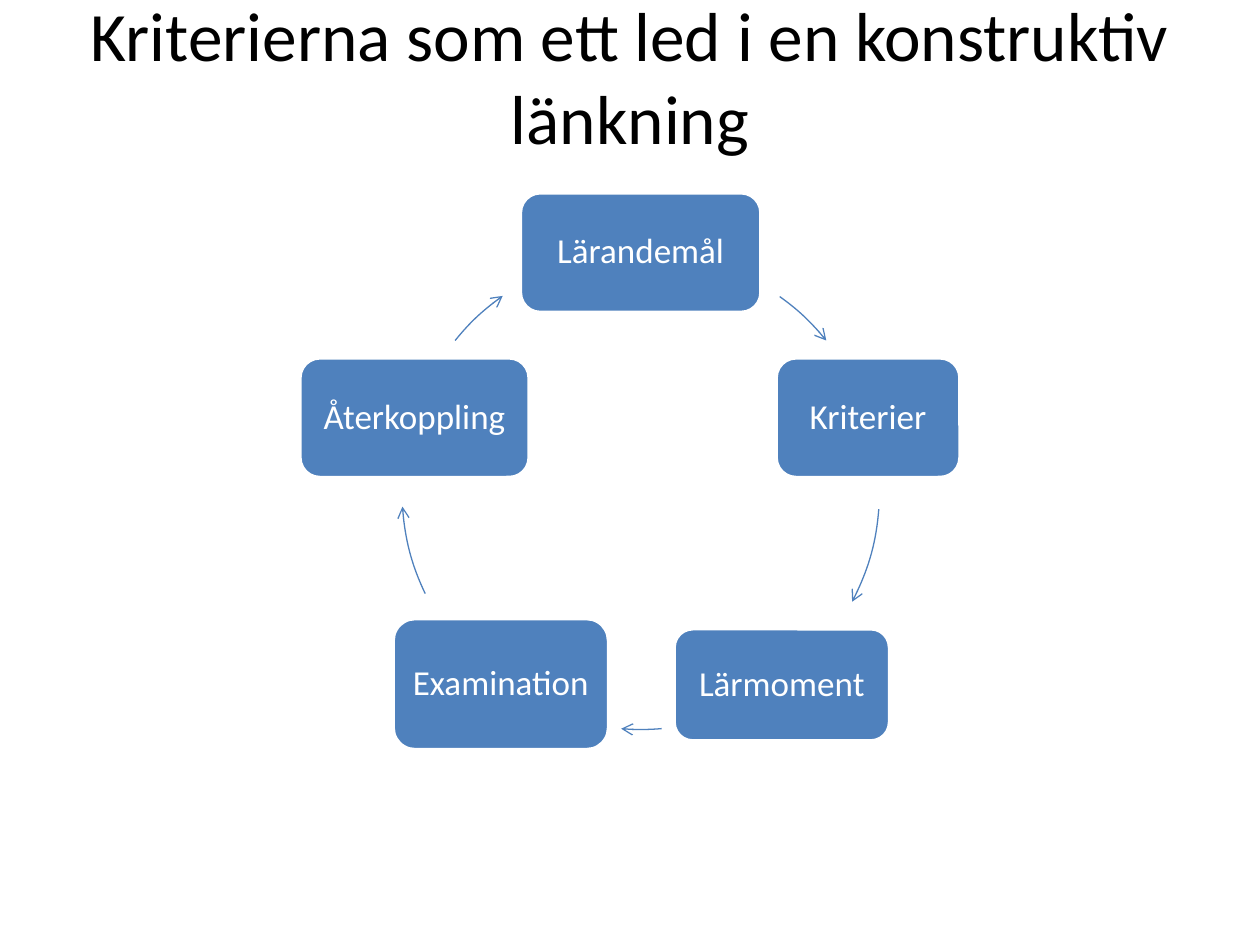
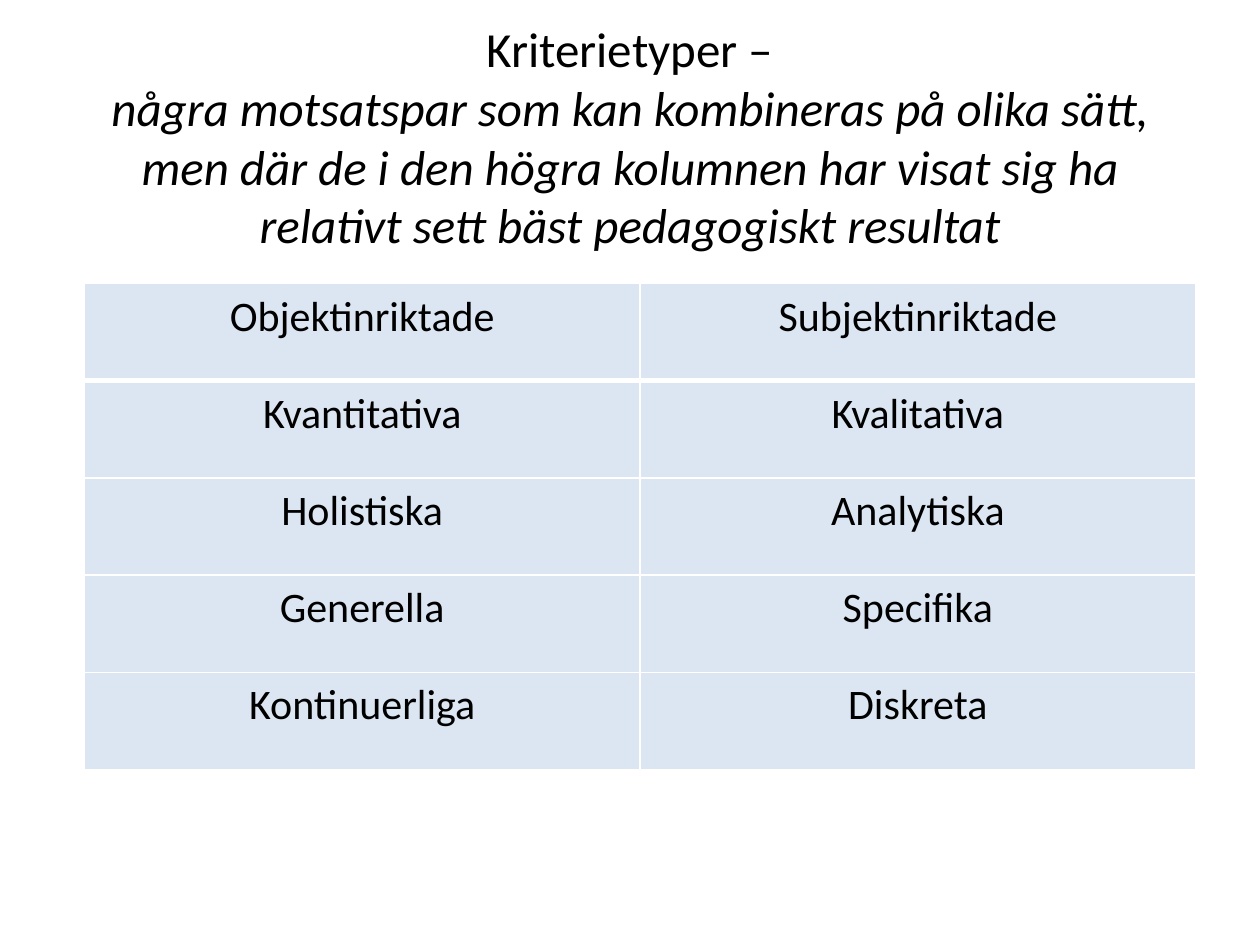
from dataclasses import dataclass
from math import cos, radians, sin
from typing import NamedTuple

from lxml.etree import SubElement
from pptx import Presentation
from pptx.dml.color import RGBColor
from pptx.enum.shapes import MSO_SHAPE as SHAPE
from pptx.enum.text import MSO_ANCHOR as ANCHOR, PP_ALIGN as ALIGN
from pptx.oxml.ns import qn
from pptx.util import Inches, Pt


@dataclass(frozen=True)
class Theme:
    font: str = "Calibri"
    black: RGBColor = RGBColor(0x00, 0x00, 0x00)
    white: RGBColor = RGBColor(0xFF, 0xFF, 0xFF)
    blue: RGBColor = RGBColor(0x4F, 0x81, 0xBD)
    pale_blue: RGBColor = RGBColor(0xDC, 0xE6, 0xF2)
    title: float = 39.6
    long_title: float = 28
    table: float = 24
    step: float = 20


THEME = Theme()


class Step(NamedTuple):
    """A box of the cycle, with the angles of the arrow that leaves it."""
    text: str
    left: float
    top: float
    width: float
    height: float
    arrow_start: float
    arrow_end: float


class TitleLine(NamedTuple):
    text: str
    italic: bool = False


STEPS = [
    Step("Lärandemål", 4.13, 1.53, 1.91, 0.95, -54.4, -39),
    Step("Kriterier", 6.16, 2.84, 1.46, 0.95, 4.4, 27.7),
    Step("Lärmoment", 5.35, 4.99, 1.71, 0.89, 85, 94.7),
    Step("Examination", 3.12, 4.91, 1.71, 1.04, 154.5, 176.2),
    Step("Återkoppling", 2.38, 2.84, 1.82, 0.95, 219, 234.7),
]
CYCLE_LEFT, CYCLE_TOP, CYCLE_SIZE = Inches(3.19), Inches(2), Inches(3.79)
ANGLE_UNITS = 60000  # DrawingML angle units per degree

CRITERIA_PAIRS = [
    ("Objektinriktade", "Subjektinriktade"),
    ("Kvantitativa", "Kvalitativa"),
    ("Holistiska", "Analytiska"),
    ("Generella", "Specifika"),
    ("Kontinuerliga", "Diskreta"),
]


def add_run(p, text: str, size: float, color: RGBColor, italic: bool = False) -> None:
    p.alignment = ALIGN.CENTER
    r = p.add_run()
    r.text = text
    r.font.name = THEME.font
    r.font.size = Pt(size)
    r.font.color.rgb = color
    r.font.italic = italic


def add_title(s, top: float, size: float, bottom_inset: float, lines: list[TitleLine]) -> None:
    box = s.shapes.add_textbox(Inches(0.5), Inches(top), Inches(9), Inches(1.25))
    tf = box.text_frame
    tf.word_wrap = True
    tf.vertical_anchor = ANCHOR.MIDDLE
    tf.margin_bottom = Inches(bottom_inset)
    p = tf.paragraphs[0]
    for i, line in enumerate(lines):
        if i:
            p.add_line_break()
        add_run(p, line.text, size, THEME.black, line.italic)


def add_step(s, step: Step) -> None:
    sp = s.shapes.add_shape(SHAPE.ROUNDED_RECTANGLE, Inches(step.left), Inches(step.top),
                            Inches(step.width), Inches(step.height))
    sp.shadow.inherit = False
    sp.fill.solid()
    sp.fill.fore_color.rgb = THEME.blue
    sp.line.color.rgb = THEME.white
    sp.line.width = Pt(2)
    tf = sp.text_frame
    tf.word_wrap = True
    tf.vertical_anchor = ANCHOR.MIDDLE
    tf.margin_left = tf.margin_right = Inches(0.08)
    tf.margin_top = tf.margin_bottom = Inches(0.08)
    p = tf.paragraphs[0]
    p.line_spacing = 0.9
    add_run(p, step.text, THEME.step, THEME.white)


def add_cycle_arrow(s, start: float, end: float) -> None:
    """Draw an arrow along the cycle's circle, clockwise between two angles in degrees."""
    radius = CYCLE_SIZE // 2
    start_point, end_point = (
        (round(radius * (1 + cos(radians(angle)))), round(radius * (1 + sin(radians(angle)))))
        for angle in (start, end))
    builder = s.shapes.build_freeform(*start_point)
    builder.add_line_segments([end_point], close=False)
    sp = builder.convert_to_shape()
    sp.left, sp.top, sp.width, sp.height = CYCLE_LEFT, CYCLE_TOP, CYCLE_SIZE, CYCLE_SIZE

    # The frame spans the whole circle, and a true arc takes the place of the chord.
    path_xml = next(sp._element.iter(qn("a:path")))
    path_xml.set("w", str(CYCLE_SIZE))
    path_xml.set("h", str(CYCLE_SIZE))
    for child in list(path_xml):
        path_xml.remove(child)
    move = SubElement(path_xml, qn("a:moveTo"))
    SubElement(move, qn("a:pt"), x=str(start_point[0]), y=str(start_point[1]))
    SubElement(path_xml, qn("a:arcTo"), wR=str(radius), hR=str(radius),
               stAng=str(round(start % 360 * ANGLE_UNITS)),
               swAng=str(round((end - start) * ANGLE_UNITS)))

    sp.shadow.inherit = False
    sp.fill.background()
    sp.line.color.rgb = THEME.blue
    sp.line.width = Pt(0.75)
    SubElement(sp.line._get_or_add_ln(), qn("a:tailEnd"), type="arrow")


def add_borders(cell, top: float, bottom: float) -> None:
    tc_pr = cell._tc.get_or_add_tcPr()
    for side, width in (("L", 1), ("R", 1), ("T", top), ("B", bottom)):
        ln = SubElement(tc_pr, qn(f"a:ln{side}"), w=str(Pt(width)))
        fill = SubElement(ln, qn("a:solidFill"))
        SubElement(fill, qn("a:srgbClr"), val=str(THEME.white))


def add_criteria_table(s) -> None:
    rows, cols = len(CRITERIA_PAIRS), len(CRITERIA_PAIRS[0])
    table = s.shapes.add_table(rows, cols, Inches(0.67), Inches(2.25),
                               Inches(8.82), Inches(3.86)).table
    table.first_row = table.horz_banding = False
    for i, pair in enumerate(CRITERIA_PAIRS):
        for j, text in enumerate(pair):
            cell = table.cell(i, j)
            add_borders(cell, top=3 if i == 1 else 1, bottom=3 if i == 0 else 1)
            cell.fill.solid()
            cell.fill.fore_color.rgb = THEME.pale_blue
            cell.margin_left = cell.margin_right = Inches(0.07)
            cell.margin_top = cell.margin_bottom = 0
            p = cell.text_frame.paragraphs[0]
            p.line_spacing = 1.15
            add_run(p, text, THEME.table, THEME.black)


def build_cycle_slide(s) -> None:
    add_title(s, 0.3, THEME.title, 0.71,
              [TitleLine("Kriterierna som ett led i en konstruktiv länkning")])
    for step in STEPS:
        add_step(s, step)
        add_cycle_arrow(s, step.arrow_start, step.arrow_end)


def build_criteria_slide(s) -> None:
    add_title(s, 0.69, THEME.long_title, 0.52, [
        TitleLine("Kriterietyper –"),
        TitleLine("några motsatspar som kan kombineras på olika sätt, men där de i den högra "
                  "kolumnen har visat sig ha relativt sett bäst pedagogiskt resultat", italic=True),
    ])
    add_criteria_table(s)


def main() -> None:
    prs = Presentation()
    prs.slide_width, prs.slide_height = Inches(10), Inches(7.5)
    blank = prs.slide_layouts[6]
    for build in (build_cycle_slide, build_criteria_slide):
        build(prs.slides.add_slide(blank))
    prs.save("out.pptx")


if __name__ == "__main__":
    main()
